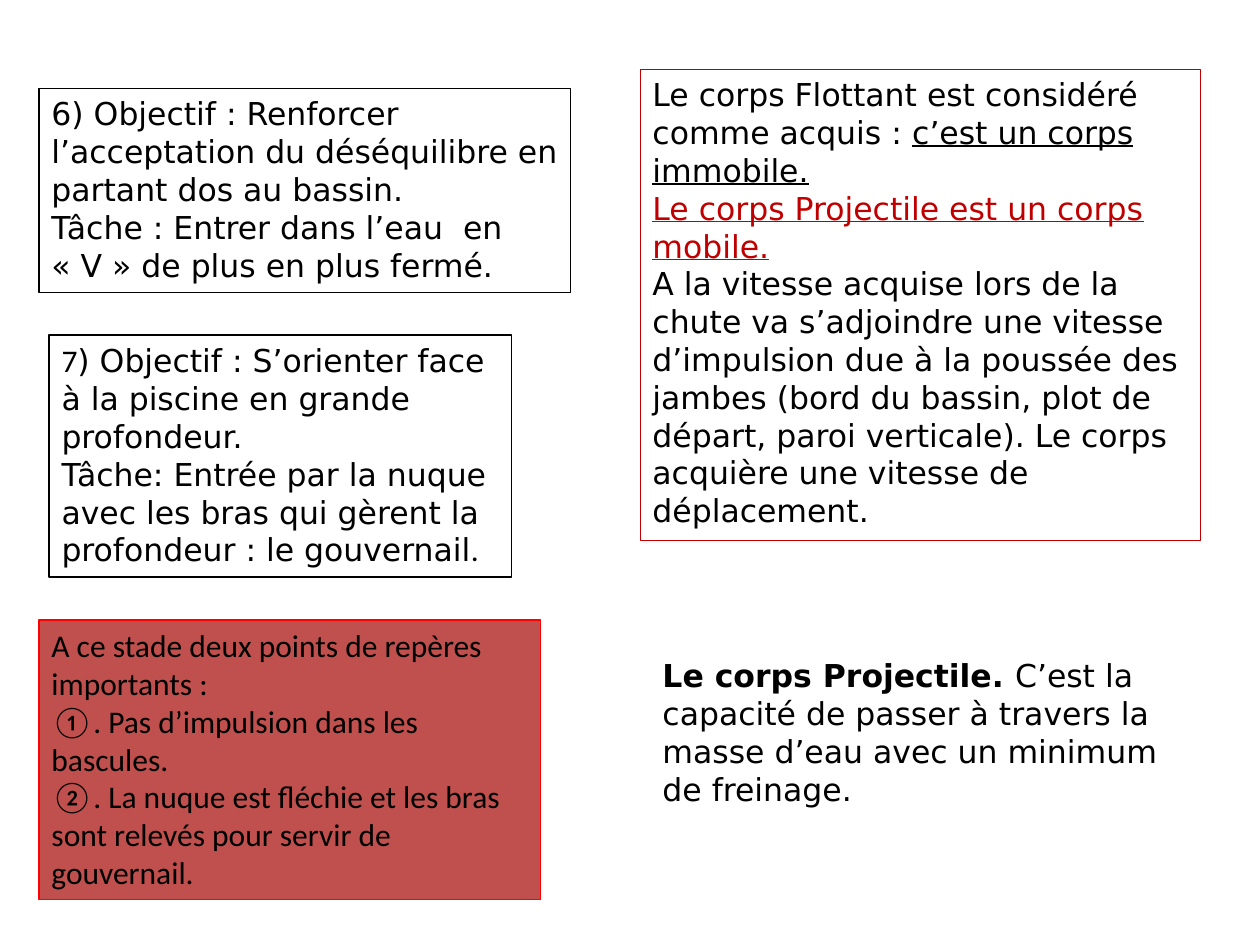
from pptx import Presentation
from pptx.dml.color import RGBColor
from pptx.enum.shapes import MSO_SHAPE as Shape
from pptx.enum.text import MSO_ANCHOR as Anchor, MSO_AUTO_SIZE as Fit, PP_ALIGN as Align
from pptx.util import Inches, Pt

COLORS = {"black": "000000", "brick": "C0504D", "red": "FF0000", "dark": "C00000"}
SANS, CAL = "DejaVu Sans", "Calibri"


def color(name):
    return RGBColor.from_string(COLORS[name])


def run(text, font=SANS, ink="black", bold=False, under=False):
    return text, font, ink, bold, under


def write(shape, paras):
    """Fill the shape with paragraphs, each a list of runs."""
    frame = shape.text_frame
    frame.word_wrap = True
    frame.auto_size = Fit.SHAPE_TO_FIT_TEXT
    frame.vertical_anchor = Anchor.TOP
    for i, runs in enumerate(paras):
        para = frame.add_paragraph() if i else frame.paragraphs[0]
        para.alignment = Align.LEFT
        for text, face, ink, bold, under in runs:
            part = para.add_run()
            part.text = text
            font = part.font
            font.name, font.size = face, Pt(18)
            font.bold, font.underline = bold, under
            font.color.rgb = color(ink)


def card(slide, box, paras, line="black", width=0.75, fill=None):
    """Draw a framed rectangle with text."""
    shape = slide.shapes.add_shape(Shape.RECTANGLE, *map(Inches, box))
    shape.shadow.inherit = False
    if fill:
        shape.fill.solid()
        shape.fill.fore_color.rgb = color(fill)
    else:
        shape.fill.background()
    shape.line.color.rgb = color(line)
    shape.line.width = Pt(width)
    write(shape, paras)


def goals(slide, left, top):
    card(slide, (left, top, 4.22, 1.62), [
        [run("6) Objectif : Renforcer  l’acceptation du déséquilibre en partant dos au bassin.")],
        [run("Tâche : Entrer dans l’eau  en «\u00a0V\u00a0» de plus en plus fermé.")],
    ])
    card(slide, (left + 0.08, top + 1.96, 3.67, 1.92), [
        [run("7", CAL),
         run(") Objectif : S’orienter face à la piscine en grande profondeur.")],
        [run("Tâche: Entrée par la nuque avec les bras qui gèrent la profondeur : le gouvernail"),
         run(".", CAL)],
    ])
    marks = ["A ce stade deux points de repères importants :",
             "①. Pas d’impulsion dans les bascules.",
             "②. La nuque est fléchie et les bras sont relevés pour servir de gouvernail."]
    card(slide, (left, top + 4.22, 3.98, 2.22), [[run(text, CAL)] for text in marks],
         line="red", fill="brick")


def theory(slide, left, top):
    card(slide, (left, top, 4.45, 3.74), [
        [run("Le corps Flottant est considéré comme acquis : "),
         run("c’est un corps immobile.", under=True)],
        [run("Le corps Projectile est un corps mobile.", ink="dark", under=True)],
        [run("A la vitesse acquise lors de la chute va s’adjoindre une vitesse d’impulsion "
             "due à la poussée des jambes (bord du bassin, plot de départ, paroi verticale). "
             "Le corps acquière une vitesse de déplacement.")],
    ], line="dark", width=0.5)
    box = (left + 0.08, top + 4.61, 4.3, 1.31)
    write(slide.shapes.add_textbox(*map(Inches, box)), [
        [run("Le corps Projectile. ", bold=True),
         run("C’est la capacité de passer à travers la masse d’eau avec un minimum")],
        [run("de freinage.")],
    ])


def main():
    deck = Presentation()
    deck.slide_width, deck.slide_height = Inches(10), Inches(7.5)
    slide = deck.slides.add_slide(deck.slide_layouts[6])
    goals(slide, 0.31, 0.7)
    theory(slide, 5.08, 0.55)
    deck.save("out.pptx")


if __name__ == "__main__":
    main()
